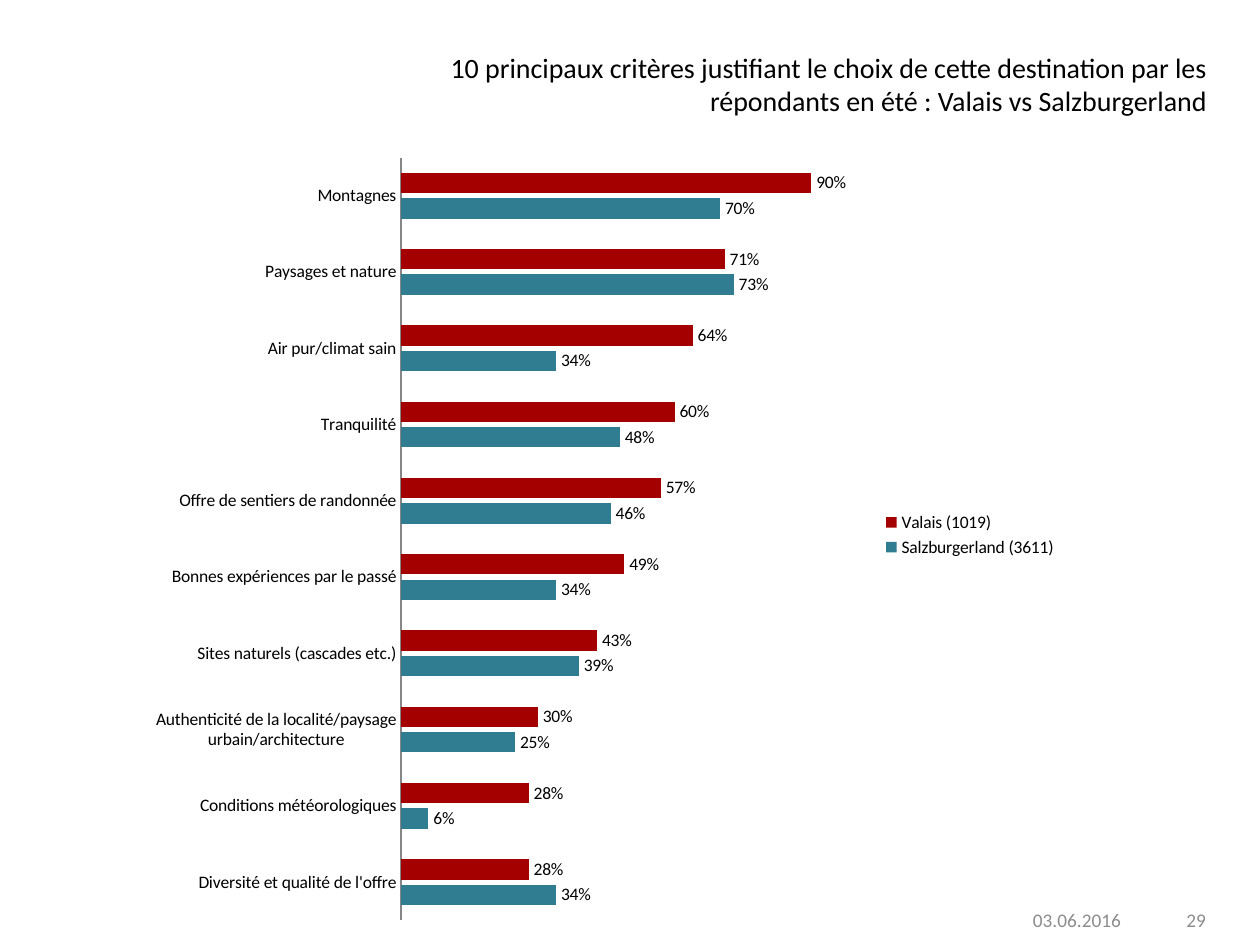
import pptx
import pptx.chart.data
import pptx.dml.color
import pptx.enum.chart
import pptx.enum.text
import pptx.oxml
import pptx.oxml.ns
import pptx.util
from pptx.util import Inches

TITLE = ("10 principaux critères justifiant le choix de cette destination par les "
         "répondants en été : Valais vs Salzburgerland")
FONT = "Calibri"
COLORS = {"text": "000000", "footer": "8C8C8C", "axis": "868686",
          "Salzburgerland (3611)": "307C90", "Valais (1019)": "A40000"}
SERIES = ["Salzburgerland (3611)", "Valais (1019)"]
# Criterion, then one share per series; a bar chart stacks categories from the bottom up
CRITERIA = [
    ("Diversité et qualité de l'offre", 0.34, 0.28),
    ("Conditions météorologiques", 0.06, 0.28),
    ("Authenticité de la localité/paysage urbain/architecture", 0.25, 0.30),
    ("Sites naturels (cascades etc.)", 0.39, 0.43),
    ("Bonnes expériences par le passé", 0.34, 0.49),
    ("Offre de sentiers de randonnée", 0.46, 0.57),
    ("Tranquilité", 0.48, 0.60),
    ("Air pur/climat sain", 0.34, 0.64),
    ("Paysages et nature", 0.73, 0.71),
    ("Montagnes", 0.70, 0.90),
]
ALIGN = pptx.enum.text.PP_ALIGN
ANCHOR = pptx.enum.text.MSO_ANCHOR
FOOTERS = [
    ("03.06.2016", (8.1, 7.1, 1, 0.4), ALIGN.LEFT),
    ("29", (7.34, 7.1, 2.33, 0.4), ALIGN.RIGHT),
]
PLOT_LAYOUT = {"x": 0.34, "y": 0.04, "w": 0.45, "h": 0.93}


def rgb(name):
    return pptx.dml.color.RGBColor.from_string(COLORS[name])


def style_font(font, size, color):
    font.name, font.size = FONT, pptx.util.Pt(size)
    font.color.rgb = rgb(color)


def fill_text(shape, text, size, color, align, anchor):
    frame = shape.text_frame
    frame.word_wrap = True
    frame.vertical_anchor = anchor
    frame.text = text
    paragraph = frame.paragraphs[0]
    paragraph.alignment = align
    style_font(paragraph.runs[0].font, size, color)


def fix_plot_area(chart, layout):
    """Place the inner plot area at fractions of the chart frame."""
    plot_area = chart._chartSpace.chart.plotArea
    for old in plot_area.findall(pptx.oxml.ns.qn("c:layout")):
        plot_area.remove(old)
    modes = "".join(f'<c:{side}Mode val="edge"/>' for side in "xy")
    sizes = "".join(f'<c:{side} val="{value}"/>' for side, value in layout.items())
    plot_area.insert(0, pptx.oxml.parse_xml(
        f'<c:layout {pptx.oxml.ns.nsdecls("c")}><c:manualLayout>'
        f'<c:layoutTarget val="inner"/>{modes}{sizes}</c:manualLayout></c:layout>'))


def add_criteria_chart(slide):
    kinds = pptx.enum.chart
    criteria, *shares = zip(*CRITERIA)
    data = pptx.chart.data.CategoryChartData(number_format="0%")
    data.categories = criteria
    for name, values in zip(SERIES, shares):
        data.add_series(name, values)
    chart = slide.shapes.add_chart(
        kinds.XL_CHART_TYPE.BAR_CLUSTERED,
        *map(Inches, (0.45, 0.99, 8.04, 6.51)), data).chart
    style_font(chart.font, 10, "text")
    plot = chart.plots[0]
    formats = [
        (chart, {"has_title": False, "has_legend": True}),
        (plot, {"gap_width": 150, "overlap": -25, "vary_by_categories": False}),
        (chart.category_axis, {"major_tick_mark": kinds.XL_TICK_MARK.NONE,
                               "has_major_gridlines": False}),
        (chart.value_axis, {"visible": False, "has_major_gridlines": False,
                            "minimum_scale": 0, "maximum_scale": 1}),
    ]
    for part, values in formats:
        for attribute, value in values.items():
            setattr(part, attribute, value)
    chart.legend.position = kinds.XL_LEGEND_POSITION.RIGHT
    chart.legend.include_in_layout = False
    axis_line = chart.category_axis.format.line
    axis_line.color.rgb = rgb("axis")
    axis_line.width = pptx.util.Pt(0.75)
    for series in plot.series:
        series.format.fill.solid()
        series.format.fill.fore_color.rgb = rgb(series.name)
        labels = series.data_labels
        labels.show_value = True
        labels.number_format, labels.number_format_is_linked = "0%", False
        labels.position = kinds.XL_LABEL_POSITION.OUTSIDE_END
    fix_plot_area(chart, PLOT_LAYOUT)


def main():
    deck = pptx.Presentation()
    deck.slide_width, deck.slide_height = Inches(10), Inches(7.5)
    slide = deck.slides.add_slide(deck.slide_layouts.get_by_name("Title Only"))

    title = slide.shapes.title
    title.left, title.top, title.width, title.height = map(Inches, (2.95, 0.35, 6.73, 0.64))
    fill_text(title, TITLE, 16, "text", ALIGN.RIGHT, ANCHOR.TOP)
    title.text_frame.auto_size = pptx.enum.text.MSO_AUTO_SIZE.SHAPE_TO_FIT_TEXT

    for text, box, align in FOOTERS:
        footer = slide.shapes.add_textbox(*map(Inches, box))
        fill_text(footer, text, 11, "footer", align, ANCHOR.MIDDLE)

    add_criteria_chart(slide)
    deck.save("out.pptx")


if __name__ == "__main__":
    main()
